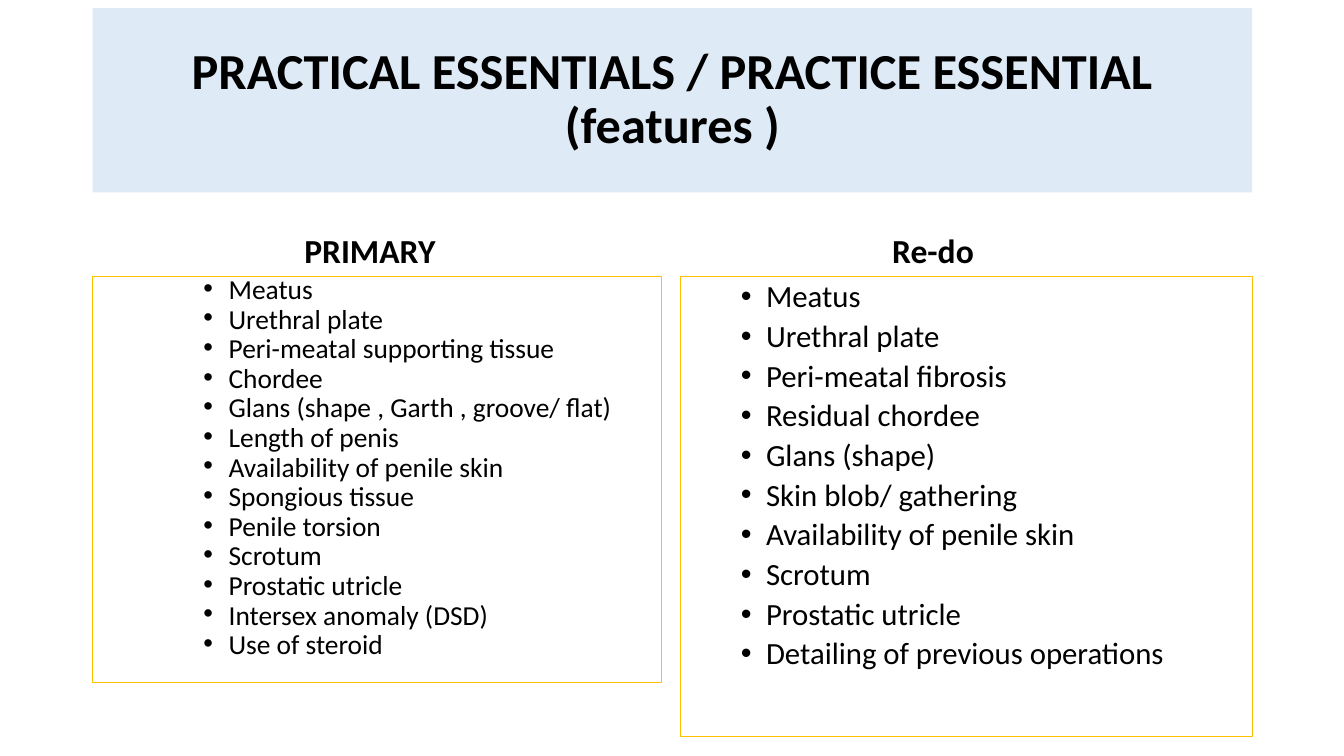
import pptx
import pptx.dml.color
import pptx.enum.shapes
import pptx.enum.text
import pptx.oxml.ns
import pptx.util
from lxml import etree

Inches = pptx.util.Inches
Pt = pptx.util.Pt
Anchor = pptx.enum.text.MSO_ANCHOR
Align = pptx.enum.text.PP_ALIGN

COLORS = {"text": "000000", "banner": "DEEBF7", "frame": "FFC000"}

PRIMARY_FEATURES = [
    "Meatus",
    "Urethral plate",
    "Peri-meatal supporting tissue",
    "Chordee",
    "Glans (shape , Garth , groove/ flat)",
    "Length of penis",
    "Availability of penile skin",
    "Spongious tissue",
    "Penile torsion",
    "Scrotum",
    "Prostatic utricle",
    "Intersex anomaly (DSD)",
    "Use of steroid",
]
REDO_FEATURES = [
    "Meatus",
    "Urethral plate",
    "Peri-meatal fibrosis",
    "Residual chordee",
    "Glans (shape)",
    "Skin blob/ gathering",
    "Availability of penile skin",
    "Scrotum",
    "Prostatic utricle",
    "Detailing of previous operations",
]


class FeatureSlide:
    font = "Calibri"

    def __init__(self, presentation):
        self.slide = presentation.slides.add_slide(presentation.slide_layouts[6])

    def color(self, name):
        return pptx.dml.color.RGBColor.from_string(COLORS[name])

    def rectangle(self, left, top, width, height, anchor):
        box = self.slide.shapes.add_shape(
            pptx.enum.shapes.MSO_SHAPE.RECTANGLE,
            Inches(left), Inches(top), Inches(width), Inches(height))
        box.shadow.inherit = False
        box.fill.background()
        box.line.fill.background()
        box.text_frame.word_wrap = True
        box.text_frame.vertical_anchor = anchor
        return box

    def format(self, paragraph, size, bold=False, spacing=0.9, align=Align.LEFT):
        paragraph.alignment = align
        paragraph.line_spacing = spacing
        for run in paragraph.runs:
            run.font.name = self.font
            run.font.size = Pt(size)
            run.font.bold = bold
            run.font.color.rgb = self.color("text")

    def indent(self, paragraph, margin, first=0):
        properties = paragraph._p.get_or_add_pPr()
        properties.set("marL", str(Inches(margin)))
        properties.set("indent", str(Inches(first)))
        return properties

    def title(self, text, left, top, width, height):
        banner = self.rectangle(left, top, width, height, Anchor.MIDDLE)
        banner.fill.solid()
        banner.fill.fore_color.rgb = self.color("banner")
        banner.text_frame.text = text
        self.format(banner.text_frame.paragraphs[0], 36, bold=True, align=Align.CENTER)

    def heading(self, text, left, top, width, height):
        label = self.slide.shapes.add_textbox(
            Inches(left), Inches(top), Inches(width), Inches(height))
        label.text_frame.word_wrap = True
        label.text_frame.vertical_anchor = Anchor.BOTTOM
        label.text_frame.text = text
        paragraph = label.text_frame.paragraphs[0]
        self.indent(paragraph, 2)
        self.format(paragraph, 24, bold=True)

    def bullets(self, items, left, top, width, height, size, margin, spacing, gap):
        frame = self.rectangle(left, top, width, height, Anchor.TOP)
        frame.line.color.rgb = self.color("frame")
        frame.line.width = Pt(0.75)
        frame.text_frame.text = "\n".join(items)
        for index, paragraph in enumerate(frame.text_frame.paragraphs):
            properties = self.indent(paragraph, margin, -0.25)
            bullet_font = etree.SubElement(properties, pptx.oxml.ns.qn("a:buFont"))
            bullet_font.set("typeface", "Arial")
            bullet = etree.SubElement(properties, pptx.oxml.ns.qn("a:buChar"))
            bullet.set("char", "•")
            self.format(paragraph, size, spacing=spacing)
            if index:
                paragraph.space_before = Pt(gap)


def main():
    presentation = pptx.Presentation()
    presentation.slide_width = Inches(13.33)
    presentation.slide_height = Inches(7.5)
    page = FeatureSlide(presentation)
    page.title("PRACTICAL ESSENTIALS / PRACTICE ESSENTIAL\v(features )",
               0.92, 0.08, 11.5, 1.83)
    columns = [
        ("PRIMARY", PRIMARY_FEATURES, 0.92, 5.64, 4.03, 19.6, 1.25, 0.7, 4.7),
        ("Re-do", REDO_FEATURES, 6.75, 5.67, 4.57, 22, 0.75, 0.9, 4.6),
    ]
    for heading, features, left, width, height, size, margin, spacing, gap in columns:
        page.heading(heading, left, 1.84, width, 0.9)
        page.bullets(features, left, 2.74, width, height, size, margin, spacing, gap)
    presentation.save("out.pptx")


if __name__ == "__main__":
    main()
